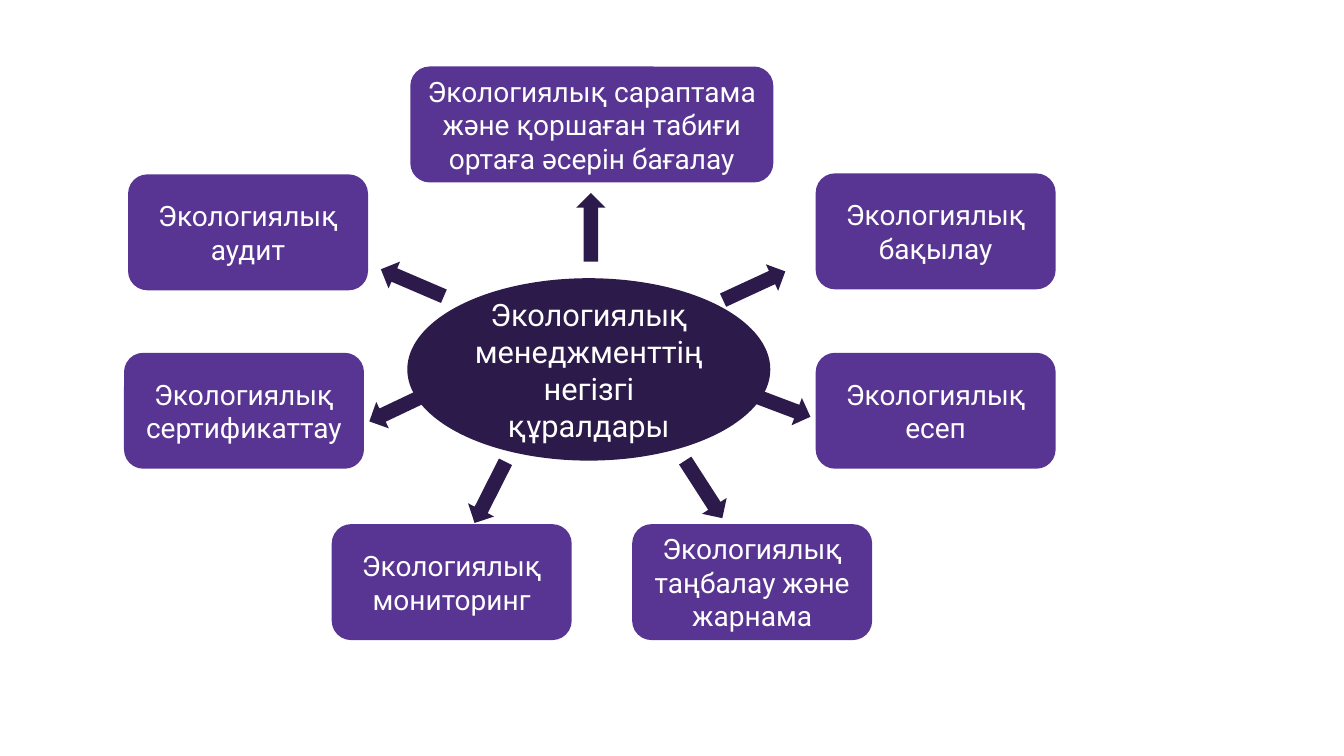
from pptx import Presentation
from pptx.dml.color import RGBColor
from pptx.enum.shapes import MSO_SHAPE
from pptx.enum.text import MSO_ANCHOR, PP_ALIGN
from pptx.util import Pt

PX = 9144  # EMU per px, 100 px to the inch
DARK = RGBColor(0x2C, 0x1B, 0x4A)
PURPLE = RGBColor(0x59, 0x35, 0x93)
WHITE = RGBColor(0xFF, 0xFF, 0xFF)

TOOL_HEIGHT = 115
TOOL_WIDTH = 238
WIDE = 360
ARROW_SIZE = (68, 29)

CENTRE = "Экологиялық менеджменттің негізгі құралдары"

# text, left, top, width of the box, then left, top, rotation of its arrow
TOOLS = [
    ("Экологиялық сараптама және қоршаған табиғи ортаға әсерін бағалау",
     407, 66, WIDE, 552, 211, 270),
    ("Экологиялық бақылау", 809, 172, TOOL_WIDTH, 714, 269, 335.2),
    ("Экологиялық есеп", 809, 350, TOOL_WIDTH, 738, 387, 20.7),
    ("Экологиялық таңбалау және жарнама", 627, 520, TOOL_WIDTH, 664, 471, 57.2),
    ("Экологиялық мониторинг", 329, 520, TOOL_WIDTH, 452, 474, 116.8),
    ("Экологиялық сертификаттау", 123, 350, TOOL_WIDTH, 363, 389, 154.6),
    ("Экологиялық аудит", 127, 173, TOOL_WIDTH, 375, 266, 203.2),
]


def write(shape, text, size, font="Roboto", color=WHITE, align=PP_ALIGN.CENTER):
    frame = shape.text_frame
    frame.word_wrap = True
    frame.vertical_anchor = MSO_ANCHOR.MIDDLE
    paragraph = frame.paragraphs[0]
    paragraph.alignment = align
    run = paragraph.add_run()
    run.text = text
    run.font.size = Pt(size)
    run.font.name = font
    run.font.color.rgb = color


class Diagram:
    def __init__(self, slide):
        self.slide = slide

    def solid(self, kind, left, top, width, height, color):
        """Add a flat preset shape without outline or shadow."""
        shape = self.slide.shapes.add_shape(
            kind, *(length * PX for length in (left, top, width, height)))
        shape.shadow.inherit = False
        shape.fill.solid()
        shape.fill.fore_color.rgb = color
        shape.line.fill.background()
        return shape

    def arrow(self, left, top, rotation):
        shape = self.solid(MSO_SHAPE.RIGHT_ARROW, left, top, *ARROW_SIZE, DARK)
        shape.rotation = rotation

    def tool(self, text, left, top, width):
        box = self.solid(MSO_SHAPE.ROUNDED_RECTANGLE, left, top, width, TOOL_HEIGHT, PURPLE)
        write(box, text, size=20)

    def hub(self, text, left, top, width, height):
        ellipse = self.solid(MSO_SHAPE.OVAL, left, top, width, height, DARK)
        write(ellipse, text, size=22)


def main():
    deck = Presentation()
    deck.slide_width, deck.slide_height = 1333 * PX, 750 * PX
    diagram = Diagram(deck.slides.add_slide(deck.slide_layouts[6]))
    for text, left, top, width, arrow_left, arrow_top, rotation in TOOLS:
        diagram.arrow(arrow_left, arrow_top, rotation)
        diagram.tool(text, left, top, width)
    diagram.hub(CENTRE, 404, 276, WIDE, 181)
    deck.save("out.pptx")


if __name__ == "__main__":
    main()
